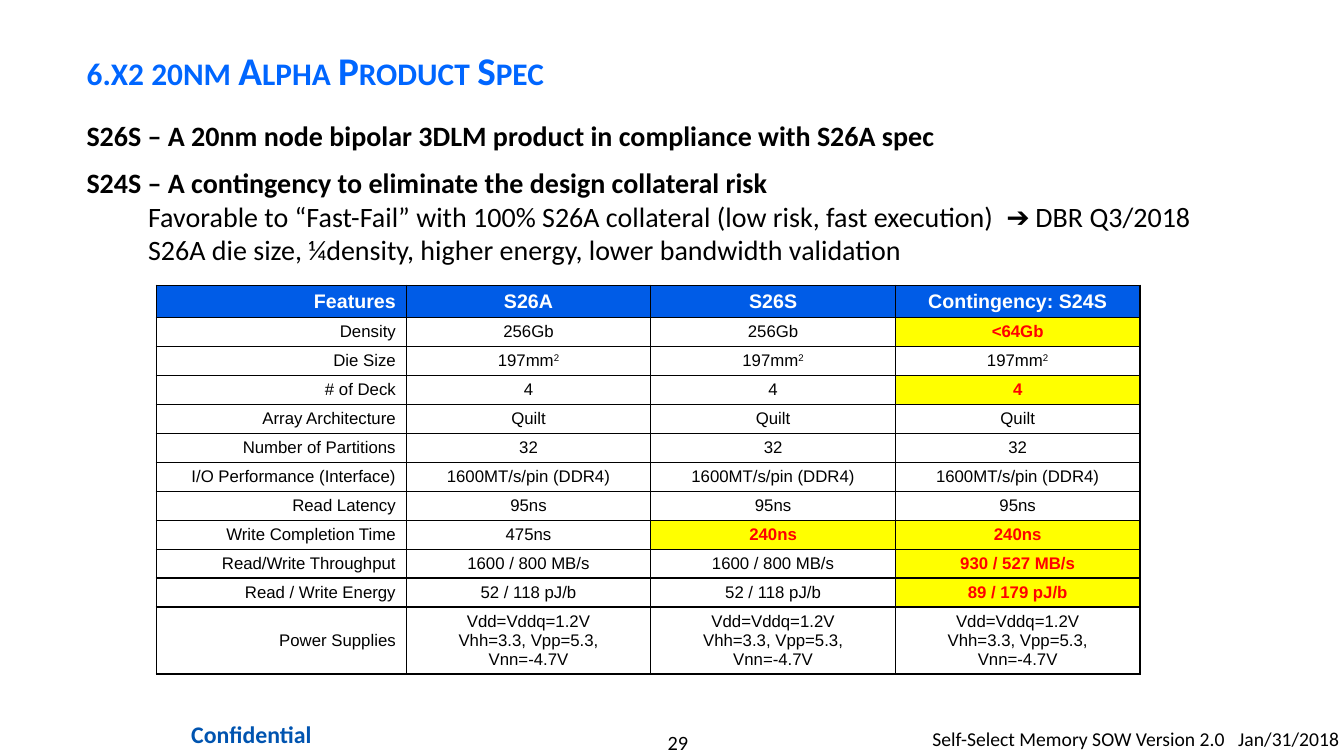
"""Build the alpha product spec slide with its feature comparison table."""
from dataclasses import dataclass

from lxml.etree import SubElement
from pptx import Presentation
from pptx.dml.color import RGBColor
from pptx.enum.text import MSO_ANCHOR, MSO_AUTO_SIZE, PP_ALIGN
from pptx.oxml import parse_xml
from pptx.oxml.ns import nsdecls, qn
from pptx.util import Pt


@dataclass(frozen=True)
class Theme:
    heading_font: str = "Calibri"
    table_font: str = "Arial"
    ink: str = "000000"
    paper: str = "FFFFFF"
    title: str = "0066FF"
    header: str = "005CE7"
    notice: str = "0054B0"
    alert: str = "FF0000"
    highlight: str = "FFFF00"
    title_size: float = 28
    body_size: float = 20
    header_size: float = 14
    cell_size: float = 12
    notice_size: float = 17
    number_size: float = 14.5
    version_size: float = 14


class SpecSlide:
    def __init__(self, deck, theme):
        self.theme = theme
        self.slide = deck.slides.add_slide(deck.slide_layouts[5])

    def style(self, paragraph, size, color, bold=False, font=None):
        for run in paragraph.runs:
            run.font.name = font or self.theme.heading_font
            run.font.size = Pt(size)
            run.font.bold = bold
            run.font.color.rgb = RGBColor.from_string(color)

    def frame(self, shape, text, inset):
        frame = shape.text_frame
        frame.auto_size = MSO_AUTO_SIZE.NONE
        frame.word_wrap = True
        frame.margin_left = frame.margin_right = Pt(inset[0])
        frame.margin_top = frame.margin_bottom = Pt(inset[1])
        frame.text = text
        return frame

    def title(self, text, box):
        heading = self.slide.shapes.title
        heading.left, heading.top, heading.width, heading.height = map(Pt, box)
        frame = self.frame(heading, text, (7.2, 3.6))
        frame.vertical_anchor = MSO_ANCHOR.MIDDLE
        line = frame.paragraphs[0]
        line.alignment = PP_ALIGN.LEFT
        line.line_spacing = 1.1
        self.style(line, self.theme.title_size, self.theme.title, True)
        line.runs[0].font._element.set("cap", "small")

    def text(self, text, box, size, color, bold=False, inset=(0, 0),
             align=PP_ALIGN.LEFT, tab=None):
        area = self.slide.shapes.add_textbox(*map(Pt, box))
        frame = self.frame(area, text, inset)
        for line in frame.paragraphs:
            line.alignment = align
            if tab:
                stops = SubElement(line._p.get_or_add_pPr(), qn("a:tabLst"))
                SubElement(stops, qn("a:tab"), pos=str(Pt(tab)), algn="l")
            self.style(line, size, color, bold)
        return frame

    def statements(self, lines, box):
        text = "\n".join(line for line, _ in lines)
        frame = self.text(text, box, self.theme.body_size, self.theme.ink, inset=(7.2, 3.6))
        for index, (paragraph, (_, level)) in enumerate(zip(frame.paragraphs, lines)):
            if level:
                paragraph.level = level
                paragraph._p.get_or_add_pPr().set("marL", str(Pt(44)))
                paragraph._p.get_or_add_pPr().set("indent", "0")
            else:
                self.style(paragraph, self.theme.body_size, self.theme.ink, True)
                if index:
                    paragraph.space_before = Pt(10)

    def border(self, cell):
        properties = cell._tc.get_or_add_tcPr()
        for index, side in enumerate(("lnL", "lnR", "lnT", "lnB")):
            properties.insert(index, parse_xml(
                f'<a:{side} {nsdecls("a")} w="{Pt(1)}"><a:solidFill>'
                f'<a:srgbClr val="{self.theme.ink}"/></a:solidFill></a:{side}>'))

    def cell(self, cell, text, align, size, color, fill, bold):
        cell.fill.solid()
        cell.fill.fore_color.rgb = RGBColor.from_string(fill)
        self.border(cell)
        cell.vertical_anchor = MSO_ANCHOR.MIDDLE
        cell.margin_left = cell.margin_right = Pt(7.4)
        cell.margin_top = cell.margin_bottom = Pt(3.2)
        base, caret, power = text.partition("^")
        cell.text_frame.text = base
        if caret:
            exponent = cell.text_frame.paragraphs[0].add_run()
            exponent.text = power
            exponent.font._element.set("baseline", "30000")
        for line in cell.text_frame.paragraphs:
            line.alignment = align
            self.style(line, size, color, bold, self.theme.table_font)

    def table(self, rows, changed, corner, widths, heights):
        theme = self.theme
        grid = self.slide.shapes.add_table(
            len(rows), len(widths), *map(Pt, (*corner, sum(widths), sum(heights)))).table
        grid.first_row = grid.horz_banding = False
        for column, width in zip(grid.columns, widths):
            column.width = Pt(width)
        for r, (values, height) in enumerate(zip(rows, heights)):
            grid.rows[r].height = Pt(height)
            for c, value in enumerate(values):
                look = (theme.cell_size, theme.ink, theme.paper, False)
                if r == 0:
                    look = (theme.header_size, theme.paper, theme.header, True)
                elif (values[0], c) in changed:
                    look = (theme.cell_size, theme.alert, theme.highlight, True)
                align = PP_ALIGN.CENTER if c else PP_ALIGN.RIGHT
                self.cell(grid.cell(r, c), value, align, *look)


STATEMENTS = [
    ("S26S – A 20nm node bipolar 3DLM product in compliance with S26A spec", 0),
    ("S24S – A contingency to eliminate the design collateral risk", 0),
    ("Favorable to “Fast-Fail” with 100% S26A collateral (low risk, fast execution)  ➔ DBR Q3/2018", 1),
    ("S26A die size, ¼density, higher energy, lower bandwidth validation", 1),
]
SUPPLIES = "Vdd=Vddq=1.2V\nVhh=3.3, Vpp=5.3, Vnn=-4.7V"
FEATURES = [
    ("Features", "S26A", "S26S", "Contingency: S24S"),
    ("Density", "256Gb", "256Gb", "<64Gb"),
    ("Die Size", *["197mm^2"] * 3),
    ("# of Deck", *["4"] * 3),
    ("Array Architecture", *["Quilt"] * 3),
    ("Number of Partitions", *["32"] * 3),
    ("I/O Performance (Interface)", *["1600MT/s/pin (DDR4)"] * 3),
    ("Read Latency", *["95ns"] * 3),
    ("Write Completion Time", "475ns", "240ns", "240ns"),
    ("Read/Write Throughput", "1600 / 800 MB/s", "1600 / 800 MB/s", "930 / 527 MB/s"),
    ("Read / Write Energy", "52 / 118 pJ/b", "52 / 118 pJ/b", "89 / 179 pJ/b"),
    ("Power Supplies", *[SUPPLIES] * 3),
]
CHANGED = {
    ("Density", 3), ("# of Deck", 3), ("Write Completion Time", 2),
    ("Write Completion Time", 3), ("Read/Write Throughput", 3), ("Read / Write Energy", 3),
}


def main():
    deck = Presentation()
    deck.slide_width, deck.slide_height = Pt(960), Pt(540)
    theme = Theme()
    spec = SpecSlide(deck, theme)
    spec.title("6.x2 20nm Alpha Product Spec", (54.7, 15.1, 796.3, 66.2))
    spec.statements(STATEMENTS, (54.7, 80.8, 882, 416))
    spec.table(FEATURES, CHANGED, (111.6, 203.8), [178.6] + [174.7] * 3,
               [22.9] + [20.7] * 10 + [47.8])
    spec.text("Confidential", (111.6, 509.8, 136, 29.5), theme.notice_size, theme.notice,
              True, (8.6, 4.3), PP_ALIGN.CENTER)
    spec.text("29", (400.3, 521.3, 167.8, 17.3), theme.number_size, theme.ink,
              align=PP_ALIGN.CENTER)
    spec.text("Self-Select Memory SOW Version 2.0\tJan/31/2018", (666, 515.5, 294, 24.5),
              theme.version_size, theme.ink, inset=(0, 3.6), tab=218.5)
    deck.save("out.pptx")


if __name__ == "__main__":
    main()
